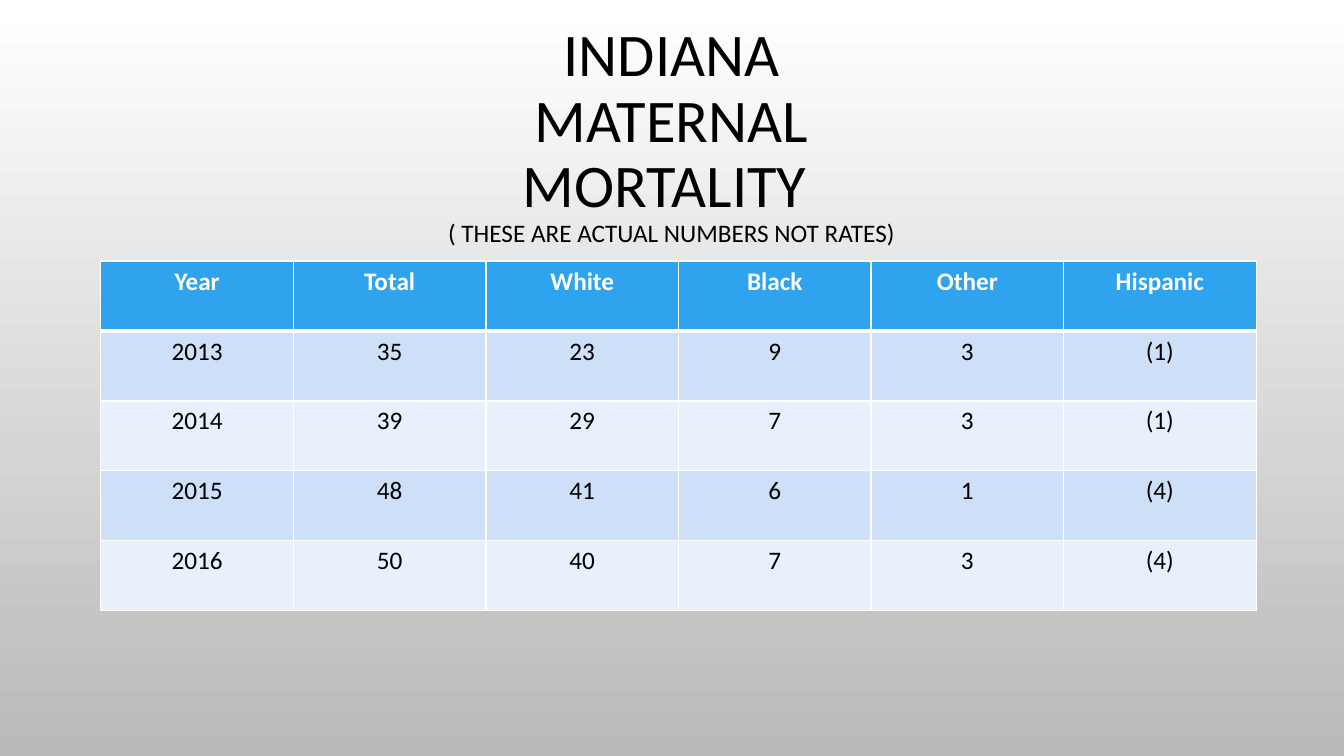
from pptx import Presentation
from pptx.dml.color import RGBColor
from pptx.enum.text import MSO_ANCHOR, PP_ALIGN
from pptx.util import Inches, Pt
from lxml.etree import SubElement
from pptx.oxml.ns import qn

COLORS = {
    "white": "FFFFFF",
    "gray": "B9B9B9",
    "black": "000000",
    "header": "2FA3EE",
    "band_dark": "CDE0F8",
    "band_light": "E8F0FC",
}
ROWS = [
    ["Year", "Total", "White", "Black", "Other", "Hispanic"],
    ["2013", "35", "23", "9", "3", "(1)"],
    ["2014", "39", "29", "7", "3", "(1)"],
    ["2015", "48", "41", "6", "1", "(4)"],
    ["2016", "50", "40", "7", "3", "(4)"],
]


def write(para, text, size=18, color="black", bold=False):
    para.alignment = PP_ALIGN.CENTER
    span = para.add_run()
    span.text = text
    span.font.name = "Calibri"
    span.font.size = Pt(size)
    span.font.bold = bold
    span.font.color.rgb = RGBColor.from_string(COLORS[color])


def add_borders(cell, bottom_width):
    properties = cell._tc.get_or_add_tcPr()
    for index, side in enumerate(["a:lnL", "a:lnR", "a:lnT", "a:lnB"]):
        width = bottom_width if side == "a:lnB" else 1
        line = properties.makeelement(qn(side), {"w": str(Pt(width))})
        fill = SubElement(line, qn("a:solidFill"))
        SubElement(fill, qn("a:srgbClr"), val=COLORS["white"])
        properties.insert(index, line)


deck = Presentation()
deck.slide_width = Inches(13.33)
deck.slide_height = Inches(7.5)
page = deck.slides.add_slide(deck.slide_layouts[6])

backdrop = page.background.fill
backdrop.gradient()
backdrop.gradient_angle = 270
for stop, name, position in zip(backdrop.gradient_stops, ["white", "gray"], [0, 1]):
    stop.color.rgb = RGBColor.from_string(COLORS[name])
    stop.position = position

title = page.shapes.add_textbox(Inches(1), Inches(0.28), Inches(11.32), Inches(2.14))
title.text_frame.word_wrap = True
title.text_frame.vertical_anchor = MSO_ANCHOR.MIDDLE
para = title.text_frame.paragraphs[0]
para.line_spacing = 0.9
for line in ["INDIANA", "MATERNAL", "MORTALITY "]:
    write(para, line, size=43.2)
    para.add_line_break()
write(para, "( THESE ARE ACTUAL NUMBERS NOT RATES)")

table = page.shapes.add_table(
    len(ROWS), len(ROWS[0]), Inches(1), Inches(2.59), Inches(11.46), Inches(3.47)
).table
for row_index, values in enumerate(ROWS):
    is_header = row_index == 0
    band = "header" if is_header else "band_dark" if row_index % 2 else "band_light"
    for column_index, value in enumerate(values):
        cell = table.cell(row_index, column_index)
        cell.fill.solid()
        cell.fill.fore_color.rgb = RGBColor.from_string(COLORS[band])
        add_borders(cell, bottom_width=3 if is_header else 1)
        write(
            cell.text_frame.paragraphs[0],
            value,
            color="white" if is_header else "black",
            bold=is_header,
        )

deck.save("out.pptx")
